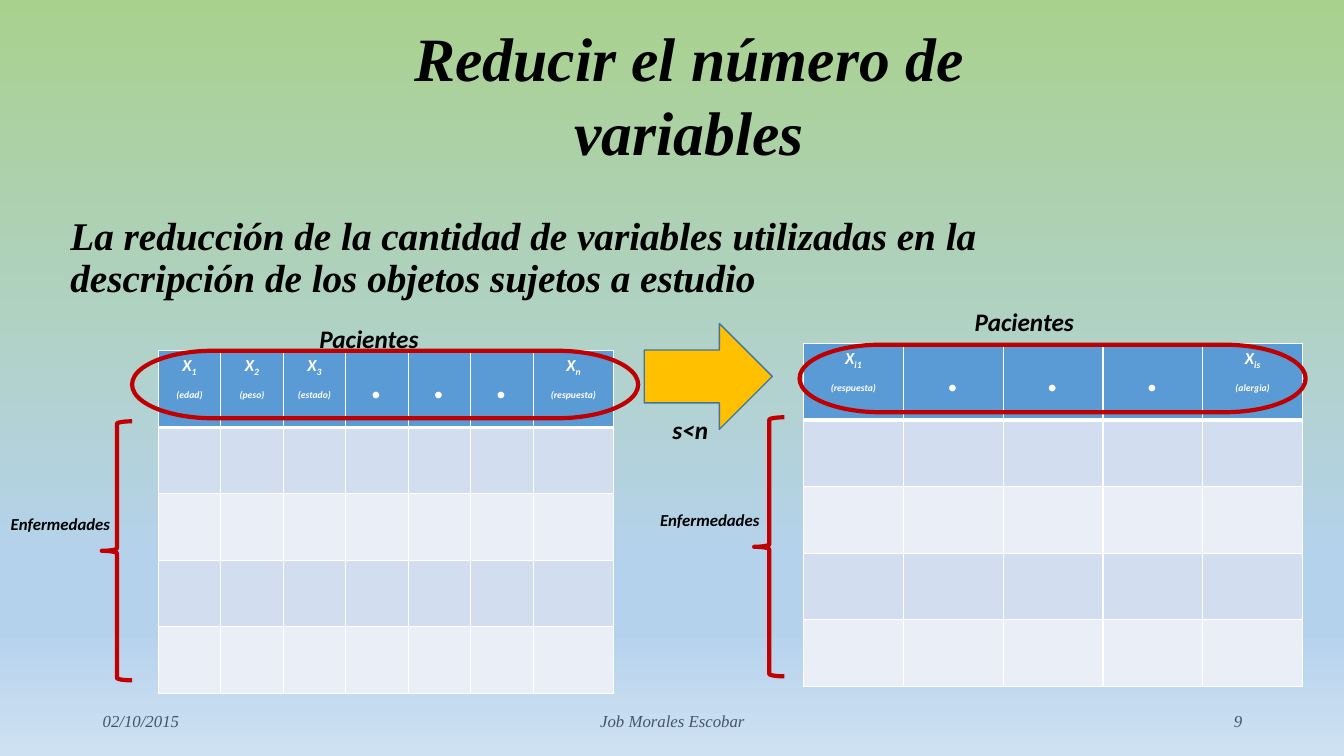
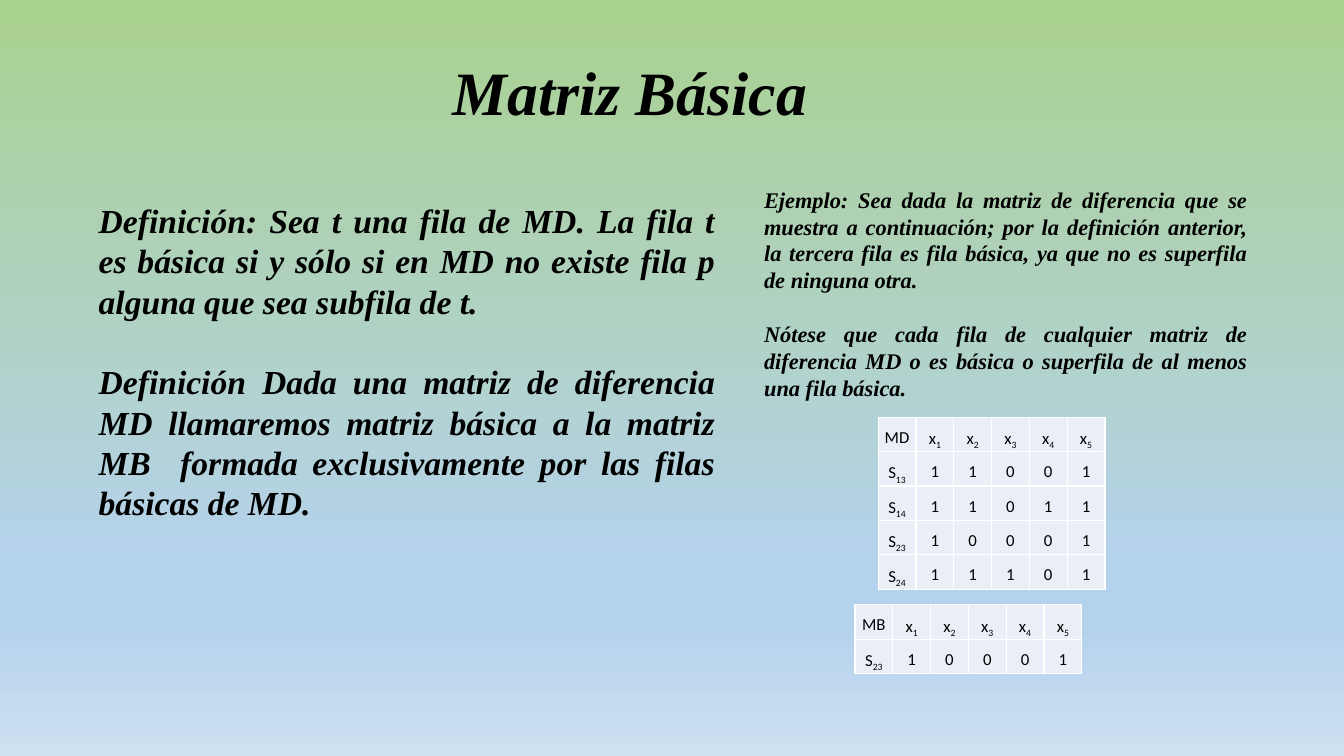
from pptx import Presentation
from pptx.dml.color import RGBColor
from pptx.enum.shapes import MSO_SHAPE
from pptx.enum.text import MSO_ANCHOR, PP_ALIGN
from pptx.oxml import parse_xml
from pptx.oxml.ns import nsdecls
from pptx.util import Inches, Pt

LEFT, CENTER = PP_ALIGN.LEFT, PP_ALIGN.CENTER
RIGHT, JUSTIFY = PP_ALIGN.RIGHT, PP_ALIGN.JUSTIFY
TOP, MIDDLE = MSO_ANCHOR.TOP, MSO_ANCHOR.MIDDLE
ARROW, BRACE = MSO_SHAPE.RIGHT_ARROW, MSO_SHAPE.LEFT_BRACE
TERMINATOR = MSO_SHAPE.FLOWCHART_TERMINATOR


class Theme:
    serif, sans = "Times New Roman", "Calibri"
    title, lead, definition, label, example, small, dot = 44, 28, 24, 18, 16, 12, 32
    ink, muted, white = "000000", "44546A", "FFFFFF"
    header, band_dark, band_light = "5B9BD5", "D2DEEF", "EAEFF7"
    mark, arrow, arrow_line = "C00000", "FFC000", "43739E"
    backdrop = [(0, "A9D18E"), (74, "B5D2EC"), (83, "B5D2EC"), (100, "CEE1F2")]


# Content: an underscore starts a subscript
REDUCTION = {
    "title": "Reducir el número de variables",
    "lead": "La reducción de la cantidad de variables utilizadas en la "
            "descripción de los objetos sujetos a estudio",
    "condition": "s<n",
}
FOOTER = [  # text, left, width, alignment
    ("02/10/2015", 0.92, 3, LEFT),
    ("Job Morales Escobar", 4.42, 4.5, CENTER),
    ("9", 9.42, 3, RIGHT),
]
PANELS = [
    {
        "heads": [["X_1", "_(edad)"], ["X_2", "_(peso)"], ["X_3", "_(estado)"],
                  ["."], ["."], ["."], ["X_n", "_(respuesta)"]],
        "columns": [0.62] * 6 + [0.8],
        "table": (1.57, 3.48), "ring": (1.31, 3.48), "brace": (1.01, 4.18),
        "top_label": (2.81, 3.16), "side_label": (0, 5.05),
    },
    {
        "heads": [["X_i1", "_(respuesta)"], ["."], ["."], ["."], ["X_is", "_(alergia)"]],
        "columns": [0.99] * 5,
        "table": (7.97, 3.41), "ring": (7.93, 3.42), "brace": (7.48, 4.14),
        "top_label": (9.31, 2.99), "side_label": (6.44, 5.01),
    },
]
PANEL_ROWS = [0.76] + [0.66] * 4

BASIC_TITLE = "Matriz Básica"
DEFINITIONS = [
    "Definición: Sea t una fila de MD. La fila t es básica si y sólo si en MD no "
    "existe fila p alguna que sea subfila de t.",
    "Definición Dada una matriz de diferencia MD llamaremos matriz básica a la "
    "matriz MB  formada exclusivamente por las filas básicas de MD.",
]
EXAMPLE = [
    "Ejemplo: Sea dada la matriz de diferencia que se muestra a continuación; por la "
    "definición anterior, la tercera fila es fila básica, ya que no es superfila de "
    "ninguna otra.",
    "Nótese que cada fila de cualquier matriz de diferencia MD o es básica o "
    "superfila de al menos una fila básica.",
]
VARIABLES = ["x_1", "x_2", "x_3", "x_4", "x_5"]
MATRICES = [  # left, top, name, rows
    (8.71, 4.14, "MD", {"S_13": "11001", "S_14": "11011",
                        "S_23": "10001", "S_24": "11101"}),
    (8.48, 6, "MB", {"S_23": "10001"}),
]
MATRIX_COLUMN, MATRIX_ROW = 0.375, 0.34


def style(para, size, font, color=Theme.ink, bold=True, italic=True):
    para.font.size, para.font.name = Pt(size), font
    para.font.bold, para.font.italic = bold, italic
    para.font.color.rgb = RGBColor.from_string(color)


def paragraphs(frame, texts):
    """Yield one paragraph per text, reusing the frame's first."""
    for index, text in enumerate(texts):
        yield (frame.add_paragraph() if index else frame.paragraphs[0]), text


def add_text(page, area, texts, size, font=Theme.serif, align=LEFT, anchor=TOP,
             color=Theme.ink, bold=True, spacing=None, gap=0, side=0.1, indent=0):
    frame = page.shapes.add_textbox(*map(Inches, area)).text_frame
    frame.word_wrap, frame.vertical_anchor = True, anchor
    frame.margin_left, frame.margin_right = Inches(side + indent), Inches(side)
    for para, text in paragraphs(frame, texts):
        para.text, para.alignment = text, align
        if spacing:
            para.line_spacing = spacing
        if text != texts[-1]:
            para.space_after = Pt(gap)
        style(para, size, font, color, bold)


def add_title(page, area, text, **options):
    add_text(page, area, [text], Theme.title, align=CENTER, anchor=MIDDLE, **options)


def add_figure(page, kind, area, line, width, fill=None):
    shape = page.shapes.add_shape(kind, *map(Inches, area))
    shape.shadow.inherit = False
    shape.line.color.rgb, shape.line.width = RGBColor.from_string(line), Pt(width)
    if fill:
        shape.fill.solid()
        shape.fill.fore_color.rgb = RGBColor.from_string(fill)
    else:
        shape.fill.background()


def add_grid(page, left, top, columns, rows):
    area = (left, top, sum(columns), sum(rows))
    table = page.shapes.add_table(len(rows), len(columns), *map(Inches, area)).table
    table.first_row = table.horz_banding = False
    for column, width in zip(table.columns, columns):
        column.width = Inches(width)
    for row, height in zip(table.rows, rows):
        row.height = Inches(height)
    return table


def paint_cell(cell, fill, bottom=1):
    properties = cell._tc.get_or_add_tcPr()
    for side, width in (("L", 1), ("R", 1), ("T", 1), ("B", bottom)):
        properties.append(parse_xml(
            f'<a:ln{side} {nsdecls("a")} w="{Pt(width)}"><a:solidFill>'
            f'<a:srgbClr val="{Theme.white}"/></a:solidFill></a:ln{side}>'))
    cell.fill.solid()
    cell.fill.fore_color.rgb = RGBColor.from_string(fill)


def write_subscripted(para, text):
    base, _, subscript = text.partition("_")
    if base:
        para.add_run().text = base
    if subscript:
        span = para.add_run()
        span.text = subscript
        span._r.get_or_add_rPr().set("baseline", "-25000")
    para.alignment = CENTER


def add_panel(page, panel):
    """Table with its ringed header row, brace and labels."""
    table = add_grid(page, *panel["table"], panel["columns"], PANEL_ROWS)
    for column, lines in enumerate(panel["heads"]):
        head = table.cell(0, column)
        paint_cell(head, Theme.header, bottom=3)
        for para, text in paragraphs(head.text_frame, lines):
            write_subscripted(para, text)
            size = Theme.dot if text == "." else Theme.small
            style(para, size, Theme.sans, Theme.white)
        for row in range(1, len(PANEL_ROWS)):
            paint_cell(table.cell(row, column),
                       Theme.band_dark if row % 2 else Theme.band_light)
    add_figure(page, TERMINATOR, (*panel["ring"], 5.02, 0.67), Theme.mark, 3)
    add_figure(page, BRACE, (*panel["brace"], 0.3, 2.57), Theme.mark, 3)
    add_text(page, (*panel["top_label"], 1.7, 0.4), ["Pacientes"], Theme.label,
             Theme.sans, CENTER)
    add_text(page, (*panel["side_label"], 1.2, 0.3), ["Enfermedades"], Theme.small,
             Theme.sans, CENTER, side=0)


def add_matrix(page, left, top, name, rows):
    lines = [[name, *VARIABLES]] + [[key, *digits] for key, digits in rows.items()]
    table = add_grid(page, left, top, [MATRIX_COLUMN] * len(lines[0]),
                     [MATRIX_ROW] * len(lines))
    for row, line in enumerate(lines):
        for column, text in enumerate(line):
            cell = table.cell(row, column)
            paint_cell(cell, Theme.band_light)
            cell.margin_left = cell.margin_right = Inches(0.05)
            cell.margin_top = cell.margin_bottom = 0
            para = cell.text_frame.paragraphs[0]
            write_subscripted(para, text)
            para.line_spacing = 1.5
            style(para, Theme.small, Theme.sans, bold=False, italic=False)


def paint_backdrop(master):
    fill = master.background.fill
    fill.gradient()
    fill.gradient_angle = 270
    stops = master.element.find(".//{*}bgPr//{*}gsLst")
    for stop in list(stops):
        stops.remove(stop)
    for share, color in Theme.backdrop:
        stops.append(parse_xml(f'<a:gs {nsdecls("a")} pos="{share * 1000}">'
                               f'<a:srgbClr val="{color}"/></a:gs>'))


def build_reduction(page):
    add_text(page, (0.6, 2.1, 10.49, 1), [REDUCTION["lead"]], Theme.lead, spacing=0.9)
    add_title(page, (2.49, 0.73, 8.19, 0.4), REDUCTION["title"], indent=0.5)
    for text, left, width, align in FOOTER:
        add_text(page, (left, 6.95, width, 0.4), [text], Theme.small, align=align,
                 anchor=MIDDLE, color=Theme.muted, bold=False)
    for panel in PANELS:
        add_panel(page, panel)
    add_figure(page, ARROW, (6.39, 3.21, 1.27, 1.05), Theme.arrow_line, 1, Theme.arrow)
    add_text(page, (6.57, 4.06, 0.7, 0.4), [REDUCTION["condition"]], Theme.label,
             Theme.sans)


def build_basic_matrix(page):
    add_title(page, (0.5, 0.22, 11.5, 1.45), BASIC_TITLE, spacing=0.9)
    for area, texts, size in (((0.88, 1.92, 6.31, 3.33), DEFINITIONS, Theme.definition),
                              ((7.48, 1.78, 4.99, 2.26), EXAMPLE, Theme.example)):
        add_text(page, area, texts, size, align=JUSTIFY, anchor=MIDDLE, gap=size * 1.2)
    for matrix in MATRICES:
        add_matrix(page, *matrix)


def main():
    deck = Presentation()
    deck.slide_width, deck.slide_height = Inches(13.33), Inches(7.5)
    paint_backdrop(deck.slide_master)
    for build in (build_reduction, build_basic_matrix):
        build(deck.slides.add_slide(deck.slide_layouts[6]))
    deck.save("out.pptx")


if __name__ == "__main__":
    main()
